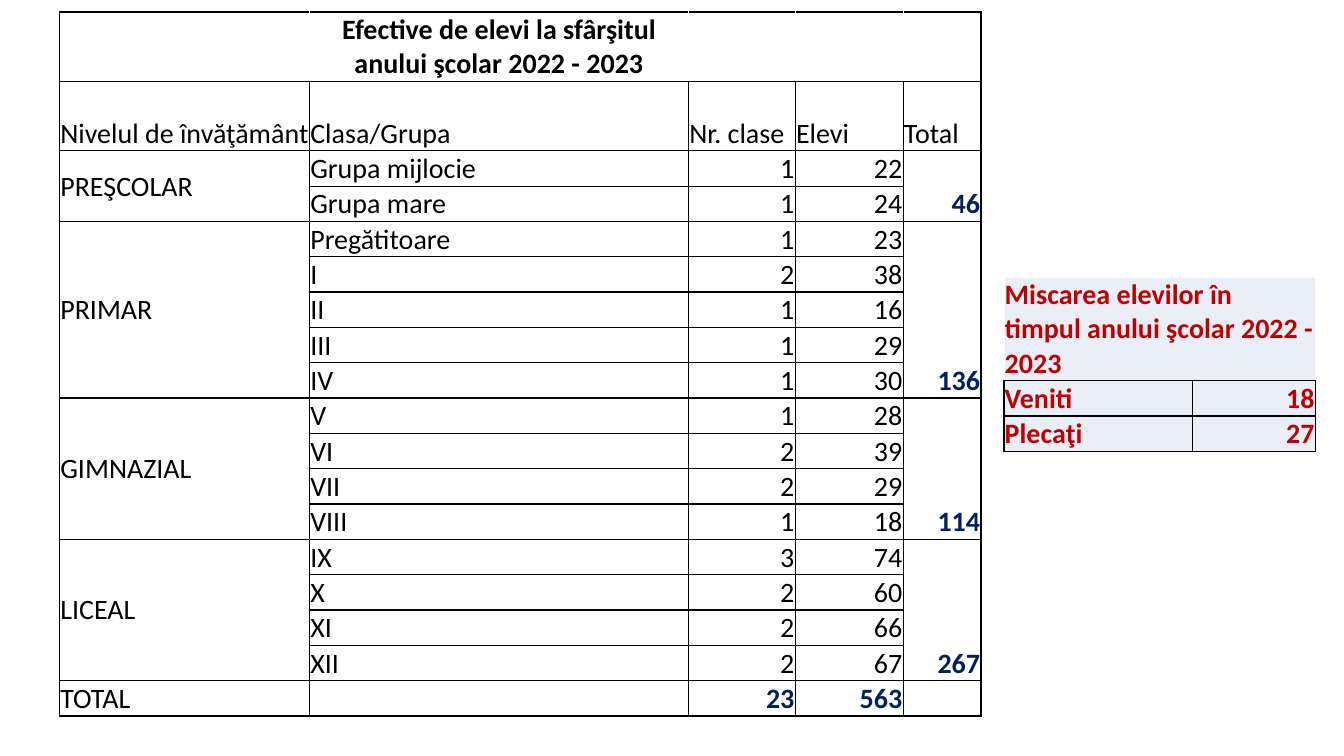
from lxml import etree
from pptx import Presentation
from pptx import util as u
from pptx.dml.color import RGBColor
from pptx.enum import text
from pptx.oxml import ns

BLACK = RGBColor(0x00, 0x00, 0x00)
WHITE = RGBColor(0xFF, 0xFF, 0xFF)
NAVY = RGBColor(0x00, 0x20, 0x60)
RED = RGBColor(0xC0, 0x00, 0x00)
PALE = RGBColor(0xEA, 0xEF, 0xF7)

ROW = 0.89
LEFT, CENTER, RIGHT = text.PP_ALIGN.LEFT, text.PP_ALIGN.CENTER, text.PP_ALIGN.RIGHT
BOTTOM, MIDDLE = text.MSO_ANCHOR.BOTTOM, text.MSO_ANCHOR.MIDDLE

TITLE = "Efective de elevi la sfârşitul anului şcolar 2022 - 2023"
HEADINGS = ["Nivelul de învăţământ", "Clasa/Grupa", "Nr. clase", "Elevi", "Total"]
LEVELS = {
    "PREŞCOLAR": [("Grupa mijlocie", 1, 22), ("Grupa mare", 1, 24)],
    "PRIMAR": [("Pregătitoare", 1, 23), ("I", 2, 38), ("II", 1, 16), ("III", 1, 29), ("IV", 1, 30)],
    "GIMNAZIAL": [("V", 1, 28), ("VI", 2, 39), ("VII", 2, 29), ("VIII", 1, 18)],
    "LICEAL": [("IX", 3, 74), ("X", 2, 60), ("XI", 2, 66), ("XII", 2, 67)],
}
MOVES_TITLE = "Miscarea elevilor în timpul anului şcolar 2022 - 2023"
MOVES = [("Veniti", 18), ("Plecaţi", 27)]


def set_borders(cell, white=""):
    """Rule the four sides of a cell in black, or white for the sides named."""
    tc_pr = cell._tc.get_or_add_tcPr()
    for i, side in enumerate("LRTB"):
        ln = etree.Element(ns.qn(f"a:ln{side}"), w=str(u.Pt(1)))
        fill = etree.SubElement(ln, ns.qn("a:solidFill"))
        color = WHITE if side in white else BLACK
        etree.SubElement(fill, ns.qn("a:srgbClr"), val=str(color))
        tc_pr.insert(i, ln)


def write(cell, value, color=BLACK, bold=False, align=None, anchor=BOTTOM):
    """Put a value in a cell, with numbers to the right and words to the left."""
    cell.vertical_anchor = anchor
    p = cell.text_frame.paragraphs[0]
    p.alignment = align or (RIGHT if isinstance(value, int) else LEFT)
    r = p.add_run()
    r.text = str(value)
    r.font.color.rgb = color
    for name, setting in {"name": "Calibri", "size": u.Pt(20), "bold": bold}.items():
        setattr(r.font, name, setting)


def add_grid(slide, left, top, widths, heights, fill=None):
    """Add an unstyled table with tight cell margins."""
    box = [u.Cm(v) for v in (left, top, sum(widths), sum(heights))]
    table = slide.shapes.add_table(len(heights), len(widths), *box).table
    table.first_row = table.horz_banding = False
    for column, width in zip(table.columns, widths):
        column.width = u.Cm(width)
    for row, height in zip(table.rows, heights):
        row.height = u.Cm(height)
    margins = {"left": 0.02, "right": 0.02, "top": 0.02, "bottom": 0}
    for cell in table.iter_cells():
        for side, margin in margins.items():
            setattr(cell, f"margin_{side}", u.Cm(margin))
        if fill is None:
            cell.fill.background()
        else:
            cell.fill.solid()
            cell.fill.fore_color.rgb = fill
    return table


def add_enrolment(slide, left, top):
    """Add the table of pupils by level and class."""
    classes = [entry for level in LEVELS.values() for entry in level]
    heights = [1.75, 1.75] + [ROW] * (len(classes) + 1)
    table = add_grid(slide, left, top, [6.3, 9.55, 2.69, 2.72, 1.96], heights)
    inner = ["R", "LR", "LR", "LR", "L"]
    for i, cell in enumerate(table.iter_cells()):
        set_borders(cell, inner[i] if i < len(inner) else "")

    write(table.cell(0, 1), TITLE, bold=True, align=CENTER)
    for col, heading in enumerate(HEADINGS):
        write(table.cell(1, col), heading)
    row = 2
    for level, entries in LEVELS.items():
        last = row + len(entries) - 1
        for col in (0, 4):
            table.cell(row, col).merge(table.cell(last, col))
        write(table.cell(row, 0), level, anchor=MIDDLE)
        write(table.cell(row, 4), sum(pupils for _, _, pupils in entries), NAVY, True)
        for entry in entries:
            for col, value in enumerate(entry, 1):
                write(table.cell(row, col), value)
            row += 1
    write(table.cell(row, 0), "TOTAL")
    for col in (2, 3):
        write(table.cell(row, col), sum(entry[col - 1] for entry in classes), NAVY, True)


def add_moves(slide, left, top):
    """Add the table of pupils who came and left."""
    table = add_grid(slide, left, top, [4.75, 3.1], [2.59, ROW, ROW], PALE)
    for i, cell in enumerate(table.iter_cells()):
        set_borders(cell, "LRT" if i < 2 else "")
    table.cell(0, 0).merge(table.cell(0, 1))
    write(table.cell(0, 0), MOVES_TITLE, RED, True)
    for row, move in enumerate(MOVES, 1):
        for col, value in enumerate(move):
            write(table.cell(row, col), value, RED, True)


def main():
    """Build the slide and save it."""
    prs = Presentation()
    prs.slide_width, prs.slide_height = u.Cm(33.87), u.Cm(19.05)
    slide = prs.slides.add_slide(prs.slide_layouts[6])
    add_enrolment(slide, 1.5, 0.3)
    add_moves(slide, 25.3, 6.98)
    prs.save("out.pptx")


if __name__ == "__main__":
    main()
